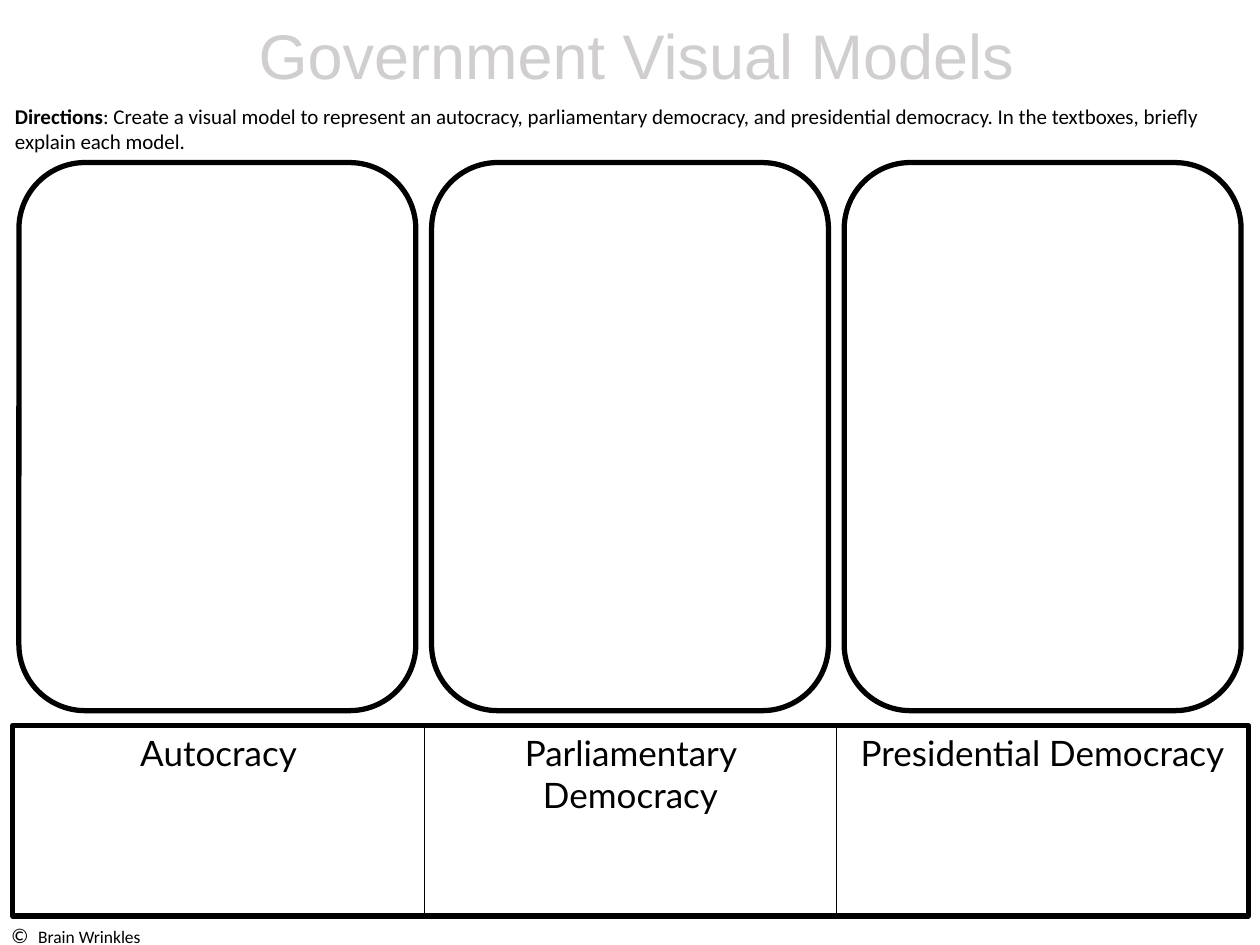
from dataclasses import dataclass

from lxml.etree import SubElement
from pptx import Presentation
from pptx.dml.color import RGBColor
from pptx.enum.shapes import MSO_SHAPE as Shape
from pptx.enum.text import MSO_AUTO_SIZE as AutoSize, PP_ALIGN as Align
from pptx.oxml import parse_xml
from pptx.oxml.ns import nsdecls, qn
from pptx.util import Inches, Pt

TITLE = "Government Visual Models"
DIRECTIONS = [
    "Directions",
    ": Create a visual model to represent an autocracy, parliamentary democracy, "
    "and presidential democracy. In the textboxes, briefly explain each model.",
]
COPYRIGHT = ["©  ", "Brain Wrinkles"]
MODELS = ["Autocracy", "Parliamentary Democracy", "Presidential Democracy"]


@dataclass(frozen=True)
class Theme:
    ink: str = "000000"
    title_color: str = "D0CECE"
    body_font: str = "Calibri"
    title_font: str = "Arial"
    label_font: str = "Lato"
    title_size: float = 36
    label_size: float = 20
    body_size: float = 12
    small_size: float = 10
    frame_width: float = 3
    grid_width: float = 1
    title_outline: float = 0.8


theme = Theme()

TABLE_BOX = (0.1, 5.76, 9.81, 1.51)
PANEL_LEFT, PANEL_TOP, PANEL_WIDTH, PANEL_HEIGHT = 0.15, 1.29, 3.15, 4.35
PANEL_PITCH = 3.275


def inches(box):
    return [Inches(value) for value in box]


def style_run(run, font, size, color=theme.ink, bold=False):
    run.font.name = font
    run.font.size = Pt(size)
    run.font.bold = bold
    run.font.color.rgb = RGBColor.from_string(color)


def line_xml(tag, width):
    return parse_xml(
        f'<a:{tag} {nsdecls("a")} w="{Pt(width)}"><a:solidFill>'
        f'<a:srgbClr val="{theme.ink}"/></a:solidFill></a:{tag}>'
    )


def add_text(slide, box, texts):
    """Add a wrapping text box with one run per text; return its frame and runs."""
    frame = slide.shapes.add_textbox(*inches(box)).text_frame
    frame.word_wrap = True
    frame.auto_size = AutoSize.SHAPE_TO_FIT_TEXT
    runs = []
    for text in texts:
        run = frame.paragraphs[0].add_run()
        run.text = text
        runs.append(run)
    return frame, runs


def add_title(slide):
    frame, (run,) = add_text(slide, (0.1, 0.09, 9.9, 0.68), [TITLE])
    frame.margin_left = frame.margin_right = Inches(0.07)
    frame.margin_top = frame.margin_bottom = Inches(0.04)
    frame.paragraphs[0].alignment = Align.CENTER
    style_run(run, theme.title_font, theme.title_size, theme.title_color)
    run.font._element.insert(0, line_xml("ln", theme.title_outline))


def add_directions(slide):
    _, (heading, body) = add_text(slide, (0.02, 0.77, 9.89, 0.81), DIRECTIONS)
    style_run(heading, theme.body_font, theme.body_size, bold=True)
    style_run(body, theme.body_font, theme.body_size)


def add_copyright(slide):
    _, (symbol, owner) = add_text(slide, (-0.01, 7.27, 2.18, 0.3), COPYRIGHT)
    style_run(symbol, theme.body_font, theme.body_size)
    style_run(owner, theme.body_font, theme.small_size)


def add_frame(slide, preset, box):
    shape = slide.shapes.add_shape(preset, *inches(box))
    shape.shadow.inherit = False
    shape.fill.background()
    shape.line.color.rgb = RGBColor.from_string(theme.ink)
    shape.line.width = Pt(theme.frame_width)


def add_label_table(slide):
    table = slide.shapes.add_table(1, len(MODELS), *inches(TABLE_BOX)).table
    table.first_row = table.horz_banding = False
    for cell, model in zip(table.rows[0].cells, MODELS):
        cell.text = model
        paragraph = cell.text_frame.paragraphs[0]
        paragraph.alignment = Align.CENTER
        style_run(paragraph.runs[0], theme.label_font, theme.label_size)
        cell.fill.background()
        properties = cell._tc.get_or_add_tcPr()
        for index, tag in enumerate(("lnL", "lnR", "lnT", "lnB")):
            properties.insert(index, line_xml(tag, theme.grid_width))


def main():
    presentation = Presentation()
    presentation.slide_width, presentation.slide_height = Inches(10), Inches(7.5)
    slide = presentation.slides.add_slide(presentation.slide_layouts[6])

    add_copyright(slide)
    add_directions(slide)
    add_title(slide)
    add_label_table(slide)
    for column in range(len(MODELS)):
        left = PANEL_LEFT + column * PANEL_PITCH
        add_frame(slide, Shape.ROUNDED_RECTANGLE,
                  (left, PANEL_TOP, PANEL_WIDTH, PANEL_HEIGHT))
    add_frame(slide, Shape.RECTANGLE, TABLE_BOX)

    presentation.save("out.pptx")


if __name__ == "__main__":
    main()
